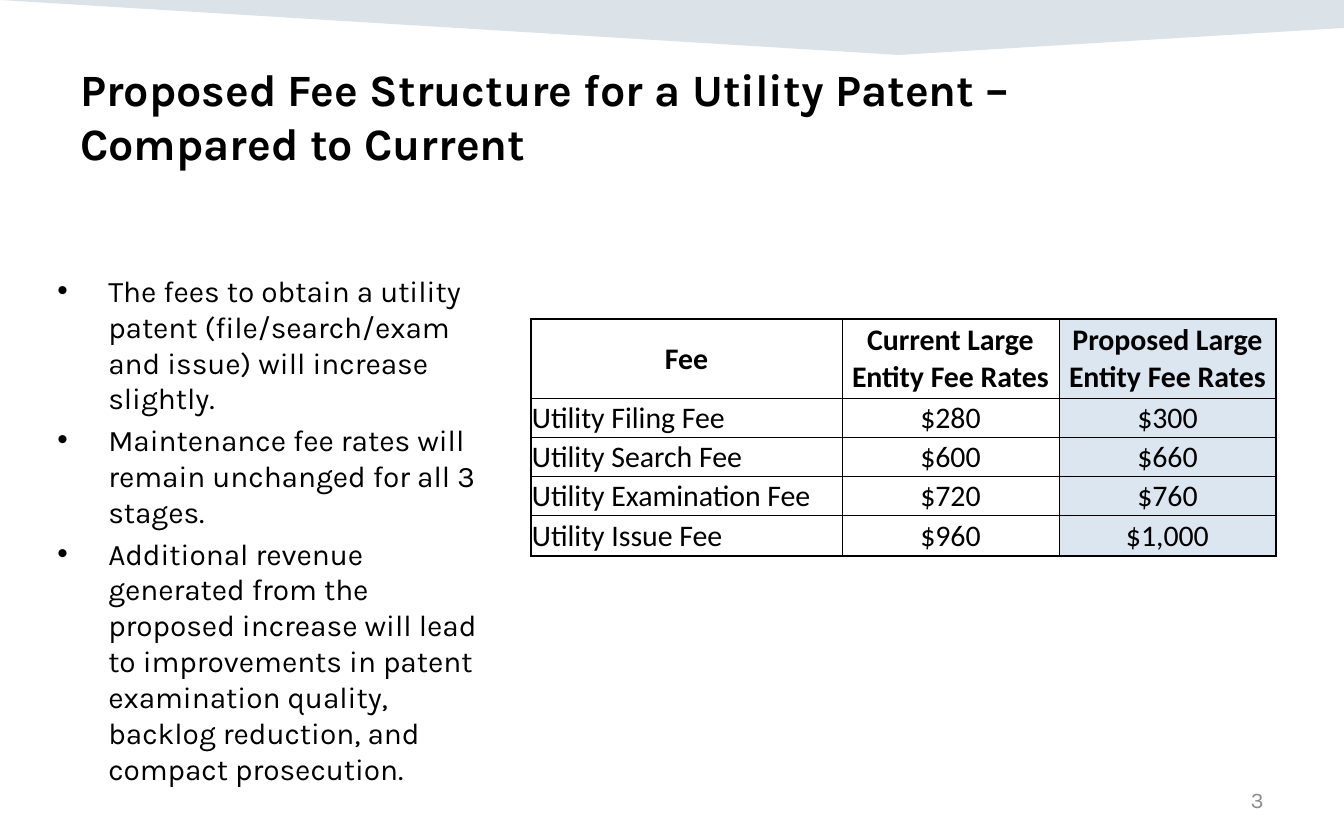
from lxml.etree import SubElement
from pptx import Presentation
from pptx.dml.color import RGBColor
from pptx.enum.text import MSO_ANCHOR, PP_ALIGN
from pptx.oxml.ns import qn
from pptx.util import Emu, Pt

EMU_PER_PX = 914400 / 134.4
BLACK = RGBColor(0x00, 0x00, 0x00)
GRAY = RGBColor(0x8C, 0x8C, 0x8C)
NAVY = RGBColor(0x16, 0x44, 0x69)
WHITE = RGBColor(0xFF, 0xFF, 0xFF)
PALE_BLUE = RGBColor(0xDC, 0xE6, 0xF1)

BULLETS = [
    "The fees to obtain a utility patent (file/search/exam and issue) will increase slightly.",
    "Maintenance fee rates will remain unchanged for all 3 stages.",
    "Additional revenue generated from the proposed increase will lead to improvements "
    "in patent examination quality, backlog reduction, and compact prosecution.",
]
FEES = [
    ["Fee", "Current Large Entity Fee Rates", "Proposed Large Entity Fee Rates"],
    ["Utility Filing Fee", "$280", "$300"],
    ["Utility Search Fee", "$600", "$660"],
    ["Utility Examination Fee", "$720", "$760"],
    ["Utility Issue Fee", "$960", "$1,000"],
]
COLUMN_WIDTHS = [311, 217, 217]
ROW_HEIGHTS = [79, 39, 39, 39, 41]
COLUMN_FILLS = [None, WHITE, PALE_BLUE]


def px(length):
    return Emu(round(length * EMU_PER_PX))


def write(paragraph, text, *, size, font="Karla", color=BLACK, bold=False,
          align=PP_ALIGN.LEFT):
    paragraph.text = text
    paragraph.alignment = align
    for run in paragraph.runs:
        run.font.size = Pt(size)
        run.font.name = font
        run.font.bold = bold
        run.font.color.rgb = color


def add_bullet(paragraph, indent):
    properties = paragraph._p.get_or_add_pPr()
    properties.set("marL", str(px(indent)))
    properties.set("indent", str(-px(indent)))
    SubElement(properties, qn("a:buFont")).set("typeface", "Arial")
    SubElement(properties, qn("a:buChar")).set("char", "•")


def set_borders(cell, widths):
    """Draw the left, right, top and bottom lines, with widths in points."""
    properties = cell._tc.get_or_add_tcPr()
    for position, (side, width) in enumerate(widths.items()):
        line = properties.makeelement(qn(f"a:{side}"), {"w": str(Pt(width))})
        fill = SubElement(line, qn("a:solidFill"))
        SubElement(fill, qn("a:srgbClr")).set("val", str(BLACK))
        properties.insert(position, line)


class SlideBuilder:
    def __init__(self, slide):
        self.slide = slide

    def banner(self, points, color, opacity):
        builder = self.slide.shapes.build_freeform(*points[0], scale=EMU_PER_PX)
        builder.add_line_segments(points[1:], close=True)
        shape = builder.convert_to_shape()
        shape.shadow.inherit = False
        shape.line.fill.background()
        shape.fill.solid()
        shape.fill.fore_color.rgb = color
        color_element = shape._element.spPr.find(".//" + qn("a:srgbClr"))
        SubElement(color_element, qn("a:alpha")).set("val", str(opacity * 1000))

    def text_box(self, left, top, width, height, anchor=MSO_ANCHOR.TOP):
        box = self.slide.shapes.add_textbox(px(left), px(top), px(width), px(height))
        frame = box.text_frame
        frame.word_wrap = True
        frame.vertical_anchor = anchor
        return frame

    def text(self, text, *bounds, anchor=MSO_ANCHOR.TOP, **style):
        write(self.text_box(*bounds, anchor=anchor).paragraphs[0], text, **style)

    def bullets(self, items, *bounds, indent, **style):
        frame = self.text_box(*bounds)
        for number, item in enumerate(items):
            paragraph = frame.add_paragraph() if number else frame.paragraphs[0]
            add_bullet(paragraph, indent)
            write(paragraph, item, **style)
            if number:
                paragraph.space_before = Pt(3.2)

    def fee_table(self, rows, left, top):
        frame = self.slide.shapes.add_table(
            len(rows), len(COLUMN_WIDTHS), px(left), px(top),
            px(sum(COLUMN_WIDTHS)), px(sum(ROW_HEIGHTS)))
        table = frame.table
        table.first_row = table.horz_banding = False
        for column, width in zip(table.columns, COLUMN_WIDTHS):
            column.width = px(width)
        for row, height in zip(table.rows, ROW_HEIGHTS):
            row.height = px(height)
        last_row, last_column = len(rows) - 1, len(COLUMN_WIDTHS) - 1
        for r, values in enumerate(rows):
            for c, value in enumerate(values):
                cell = table.cell(r, c)
                cell.margin_left = cell.margin_right = cell.margin_top = px(1)
                cell.margin_bottom = 0
                cell.vertical_anchor = MSO_ANCHOR.MIDDLE
                fill = COLUMN_FILLS[c] if r or c == last_column else None
                if fill is None:
                    cell.fill.background()
                else:
                    cell.fill.solid()
                    cell.fill.fore_color.rgb = fill
                is_label = r > 0 and c == 0
                write(cell.text_frame.paragraphs[0], value, size=16, font="Calibri",
                      bold=r == 0, align=PP_ALIGN.LEFT if is_label else PP_ALIGN.CENTER)
                set_borders(cell, {
                    "lnL": 1 if c == 0 else 0.5,
                    "lnR": 1 if c == last_column else 0.5,
                    "lnT": 1 if r == 0 else 0.5,
                    "lnB": 1 if r == last_row else 0.5,
                })


def main():
    presentation = Presentation()
    presentation.slide_width = px(1344)
    presentation.slide_height = px(840)
    builder = SlideBuilder(presentation.slides.add_slide(presentation.slide_layouts[6]))
    builder.banner([(0, 0), (1344, 0), (1344, 28), (899, 55)], NAVY, opacity=15)
    builder.text("Proposed Fee Structure for a Utility Patent –\nCompared to Current",
                 67, 55, 1210, 69, size=24, bold=True)
    builder.text("3", 964, 778, 313, 44, anchor=MSO_ANCHOR.MIDDLE,
                 size=12, color=GRAY, align=PP_ALIGN.RIGHT)
    builder.bullets(BULLETS, 44, 266, 468, 481, indent=51, size=16)
    builder.fee_table(FEES, 531, 319)
    presentation.save("out.pptx")


if __name__ == "__main__":
    main()
